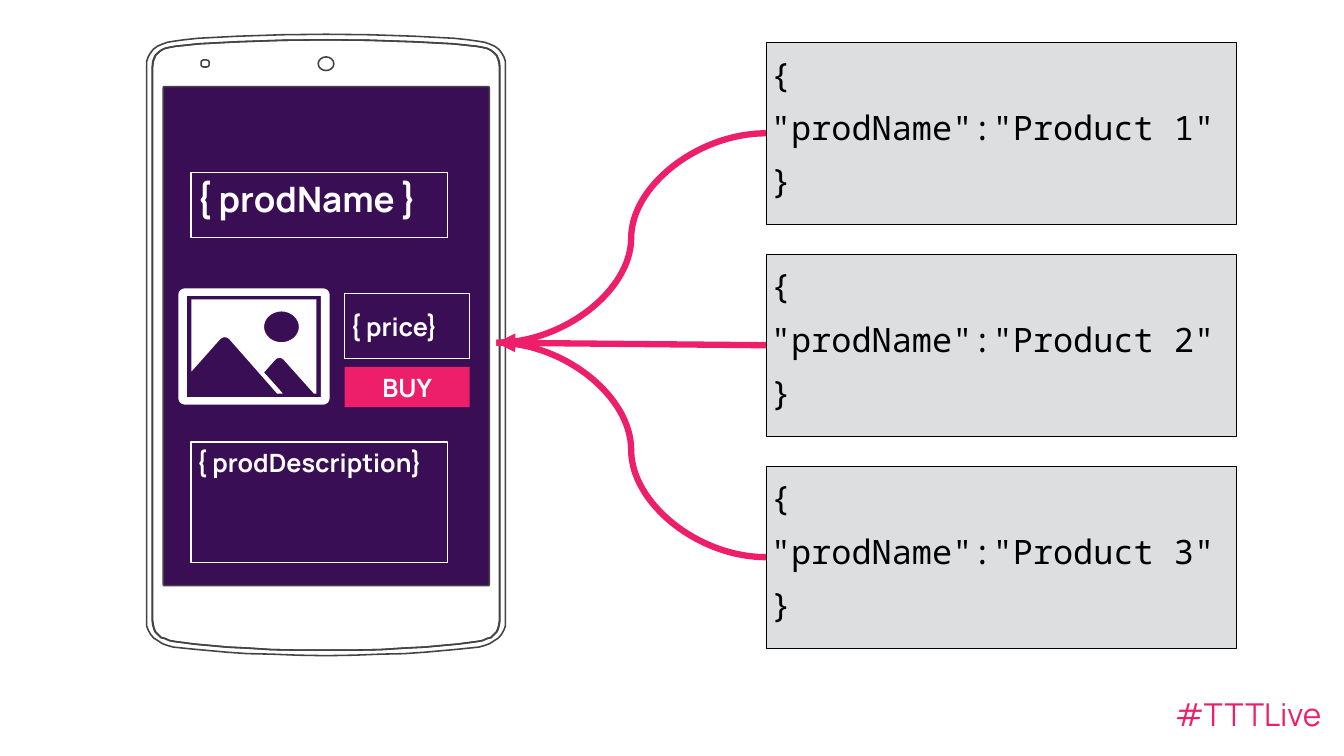
import math

from lxml import etree
from pptx import Presentation
from pptx.dml.color import RGBColor
from pptx.enum.shapes import MSO_CONNECTOR, MSO_SHAPE
from pptx.enum.text import MSO_ANCHOR, PP_ALIGN
from pptx.oxml.ns import qn
from pptx.util import Inches, Pt

RECT = MSO_SHAPE.RECTANGLE
STRAIGHT, CURVE = MSO_CONNECTOR.STRAIGHT, MSO_CONNECTOR.CURVE
TOP, MIDDLE = MSO_ANCHOR.TOP, MSO_ANCHOR.MIDDLE
LEFT, CENTER, RIGHT = PP_ALIGN.LEFT, PP_ALIGN.CENTER, PP_ALIGN.RIGHT

COLORS = {"white": "FFFFFF", "black": "000000", "purple": "3A0E55", "pink": "ED1F6A",
          "gray": "DCDEE0", "outline": "434343", "screen_edge": "53585F"}
SANS, MONO = "Manrope", "Noto Sans Mono"

# Right half of each phone contour: distance from the centre line, distance from the top
BODY_HALF = [
    (0, 0), (0.87, 0.01), (1.77, 0.04), (2.54, 0.08), (2.82, 0.11), (3.03, 0.14),
    (3.15, 0.16), (3.26, 0.2), (3.35, 0.24), (3.43, 0.3), (3.49, 0.38), (3.53, 0.45),
    (3.56, 0.54), (3.56, 0.65), (3.56, 11.63), (3.56, 11.74), (3.53, 11.82),
    (3.48, 11.91), (3.42, 11.98), (3.34, 12.03), (3.25, 12.09), (3.14, 12.13),
    (3.03, 12.16), (2.64, 12.2), (1.98, 12.26), (1.55, 12.29), (1.08, 12.3),
    (0.57, 12.32), (0, 12.33)]
BEZEL_HALF = [
    (0, 0.11), (0.87, 0.12), (1.76, 0.15), (2.53, 0.19), (2.81, 0.22), (3, 0.24),
    (3.11, 0.26), (3.2, 0.28), (3.28, 0.32), (3.34, 0.37), (3.39, 0.42), (3.42, 0.49),
    (3.44, 0.55), (3.45, 0.65), (3.45, 11.63), (3.44, 11.71), (3.42, 11.79),
    (3.39, 11.86), (3.34, 11.91), (3.28, 11.97), (3.2, 11.99), (3.11, 12.03),
    (3, 12.05), (2.62, 12.1), (1.96, 12.16), (1.55, 12.18), (1.08, 12.21),
    (0.57, 12.22), (0, 12.22)]
LANDSCAPE = [
    (0.26, 0.22), (0.26, 1.65), (0.83, 1.01), (0.87, 0.98), (0.92, 0.97), (0.97, 0.98),
    (1.01, 1.01), (1.96, 2.09), (2.07, 2.09), (2.04, 2.05), (1.7, 1.67), (1.92, 1.42),
    (1.96, 1.39), (2.01, 1.38), (2.05, 1.39), (2.09, 1.42), (2.69, 2.09), (2.74, 2.09),
    (2.74, 0.22)]


def rgb(name):
    return RGBColor.from_string(COLORS[name])


def style(shape, fill=None, line=None, width=0.75):
    shape.shadow.inherit = False
    if fill:
        shape.fill.solid()
        shape.fill.fore_color.rgb = rgb(fill)
    else:
        shape.fill.background()
    if line:
        shape.line.color.rgb = rgb(line)
        shape.line.width = Pt(width)
    else:
        shape.line.fill.background()


def add_box(page, x, y, w, h, **look):
    box = page.shapes.add_shape(RECT, Inches(x), Inches(y), Inches(w), Inches(h))
    style(box, **look)
    return box


def write(box, lines, size, font, color, bold=False, align=LEFT, anchor=TOP,
          inset=0.1, line_spacing=None, gap=0):
    frame = box.text_frame
    frame.word_wrap = True
    frame.vertical_anchor = anchor
    frame.margin_left = frame.margin_right = Inches(inset)
    frame.margin_top = frame.margin_bottom = Inches(inset)
    for i, line in enumerate(lines):
        para = frame.paragraphs[0] if i == 0 else frame.add_paragraph()
        para.alignment = align
        if line_spacing:
            para.line_spacing = line_spacing
        if i and gap:
            para.space_before = Pt(gap)
        span = para.add_run()
        span.text = line
        span.font.name, span.font.size, span.font.bold = font, Pt(size), bold
        span.font.color.rgb = rgb(color)


def rounded(x, y, w, h, rx, ry, steps=4):
    """Contour of a rounded rectangle; radii of half its size give an ellipse."""
    corners = [(x + w - rx, y + h - ry), (x + rx, y + h - ry),
               (x + rx, y + ry), (x + w - rx, y + ry)]
    points = []
    for quarter, (cx, cy) in enumerate(corners):
        for step in range(steps + 1):
            angle = (quarter + step / steps) * math.pi / 2
            points.append((cx + rx * math.cos(angle), cy + ry * math.sin(angle)))
    return points


def mirrored(half, center, inset=0):
    right = [(center + max(dx - inset, 0), y) for dx, y in half]
    left = [(center - max(dx - inset, 0), y) for dx, y in reversed(half)]
    return right + left


def add_outline(shapes, x, y, contours, **look):
    placed = [[(Inches(x + dx), Inches(y + dy)) for dx, dy in points] for points in contours]
    builder = shapes.build_freeform(*placed[0][0])
    for i, points in enumerate(placed):
        if i:
            builder.move_to(*points[0])
        builder.add_line_segments(points[1:], close=True)
    style(builder.convert_to_shape(), **look)


def add_picture_icon(page, x, y, w, h):
    group = page.shapes.add_group_shape()
    frame = rounded(0, 0, w, h, 0.14, 0.12)
    opening = rounded(0.17, 0.15, w - 0.34, h - 0.3, 0, 0, 1)
    sun = rounded(1.7, 0.46, 0.69, 0.61, 0.345, 0.305, 8)
    for contours in ([opening, frame], [sun, LANDSCAPE]):
        add_outline(group.shapes, x, y, contours, fill="white")


def add_phone(page, x, y, w):
    add_box(page, x + 0.26, y + 0.99, w - 0.44, 10.27, fill="purple", line="screen_edge")
    center = w / 2
    speaker = rounded(1.08, 0.51, 0.16, 0.14, 0.05, 0.04, 2)
    camera = rounded(center - 0.155, 0.45, 0.31, 0.27, 0.155, 0.135)
    screen = rounded(0.33, 1.04, w - 0.65, 9.9, 0.01, 0.02, 1)
    add_outline(page.shapes, x, y,
                [speaker, camera, screen, mirrored(BEZEL_HALF, center),
                 mirrored(BEZEL_HALF, center, 0.01), mirrored(BODY_HALF, center)],
                fill="white", line="outline", width=2.25)

    border = {"line": "white", "width": 1.5}
    fields = [
        ("{ prodName }", 0.88, 2.75, 5.09, 1.28, 50, LEFT, TOP, border),
        ("{ price}", 3.93, 5.15, 2.48, 1.28, 36, LEFT, MIDDLE, border),
        ("BUY", 3.93, 6.6, 2.48, 0.8, 36, CENTER, MIDDLE, {"fill": "pink"}),
        ("{ prodDescription}", 0.88, 8.09, 5.09, 2.39, 36, LEFT, TOP, border)]
    for text, dx, dy, width, height, size, align, anchor, look in fields:
        box = add_box(page, x + dx, y + dy, width, height, **look)
        write(box, [text], size, SANS, "white", True, align, anchor)
    add_picture_icon(page, x + 0.63, y + 5.04, 3, 2.31)


def add_record(page, number, x, y, w, h):
    box = add_box(page, x, y, w, h, fill="gray", line="black")
    lines = ["{", f'"prodName":"Product {number}"', "}"]
    write(box, lines, 48, MONO, "black", line_spacing=1.15, gap=10)


def add_link(page, kind, start, end, arrow=False):
    link = page.shapes.add_connector(kind, *map(Inches, start + end))
    link.line.color.rgb = rgb("pink")
    link.line.width = Pt(9)
    if arrow:
        etree.SubElement(link.line._get_or_add_ln(), qn("a:tailEnd"), type="triangle")
    etree.SubElement(link._element.spPr, qn("a:effectLst"))


def add_hashtag(page, x, y, w, h):
    box = page.shapes.add_textbox(Inches(x), Inches(y), Inches(w), Inches(h))
    write(box, ["#TTTLive"], 45, SANS, "pink", align=RIGHT, anchor=MIDDLE, inset=0.08)


def main():
    deck = Presentation()
    deck.slide_width, deck.slide_height = Inches(26.67), Inches(15)
    page = deck.slides.add_slide(deck.slide_layouts[6])

    add_hashtag(page, 19.38, 13.64, 6.92, 1.04)
    add_phone(page, 2.91, 0.68, 7.12)

    left, top, width, height, pitch = 15.2, 0.84, 9.34, 3.61, 4.205
    for i in range(3):
        add_record(page, i + 1, left, top + i * pitch, width, height)

    target = (9.85, 6.8)
    for i, kind in ((0, CURVE), (2, CURVE), (1, STRAIGHT)):
        start = (left, top + i * pitch + height / 2)
        add_link(page, kind, start, target, arrow=kind == STRAIGHT)

    deck.save("out.pptx")


if __name__ == "__main__":
    main()
